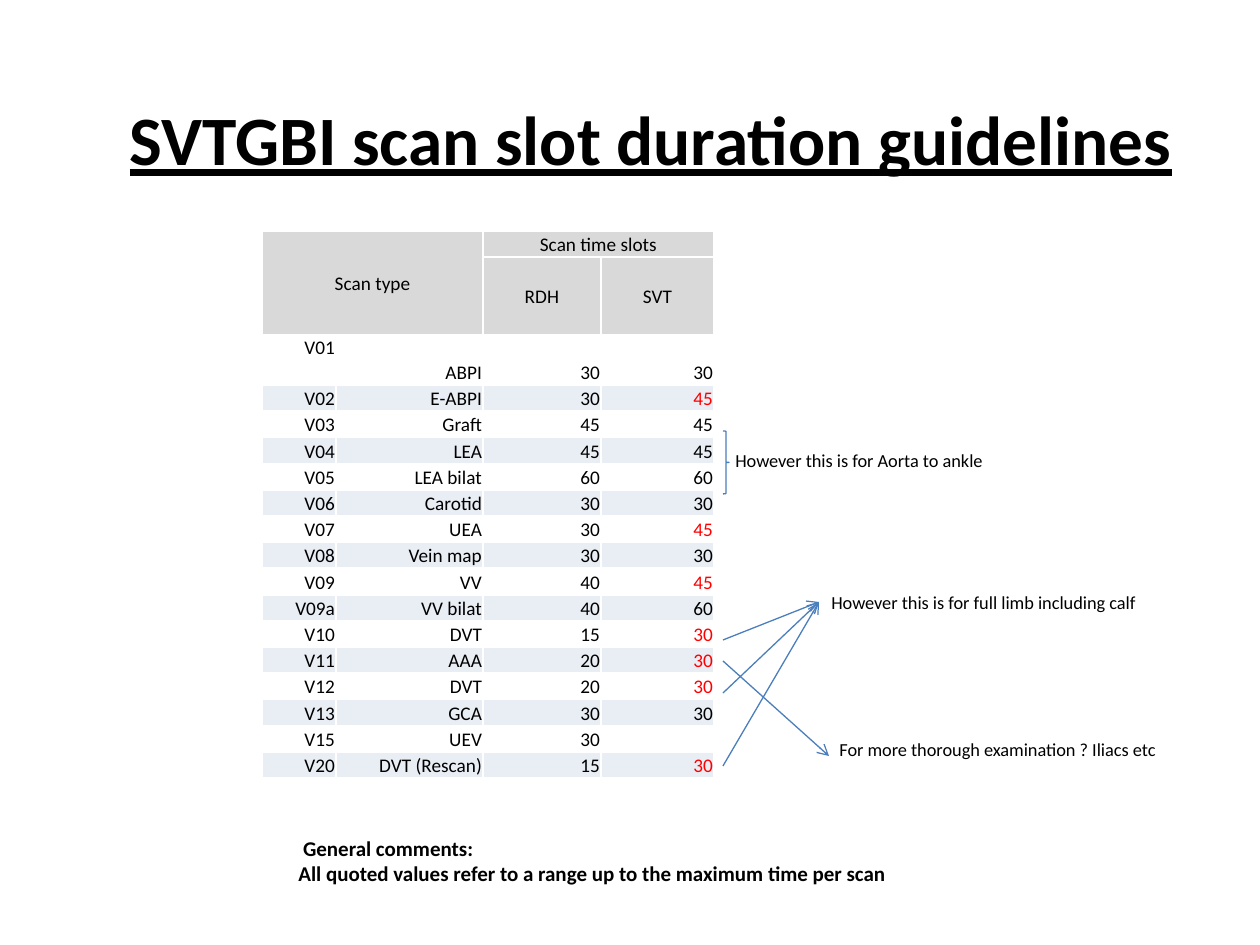
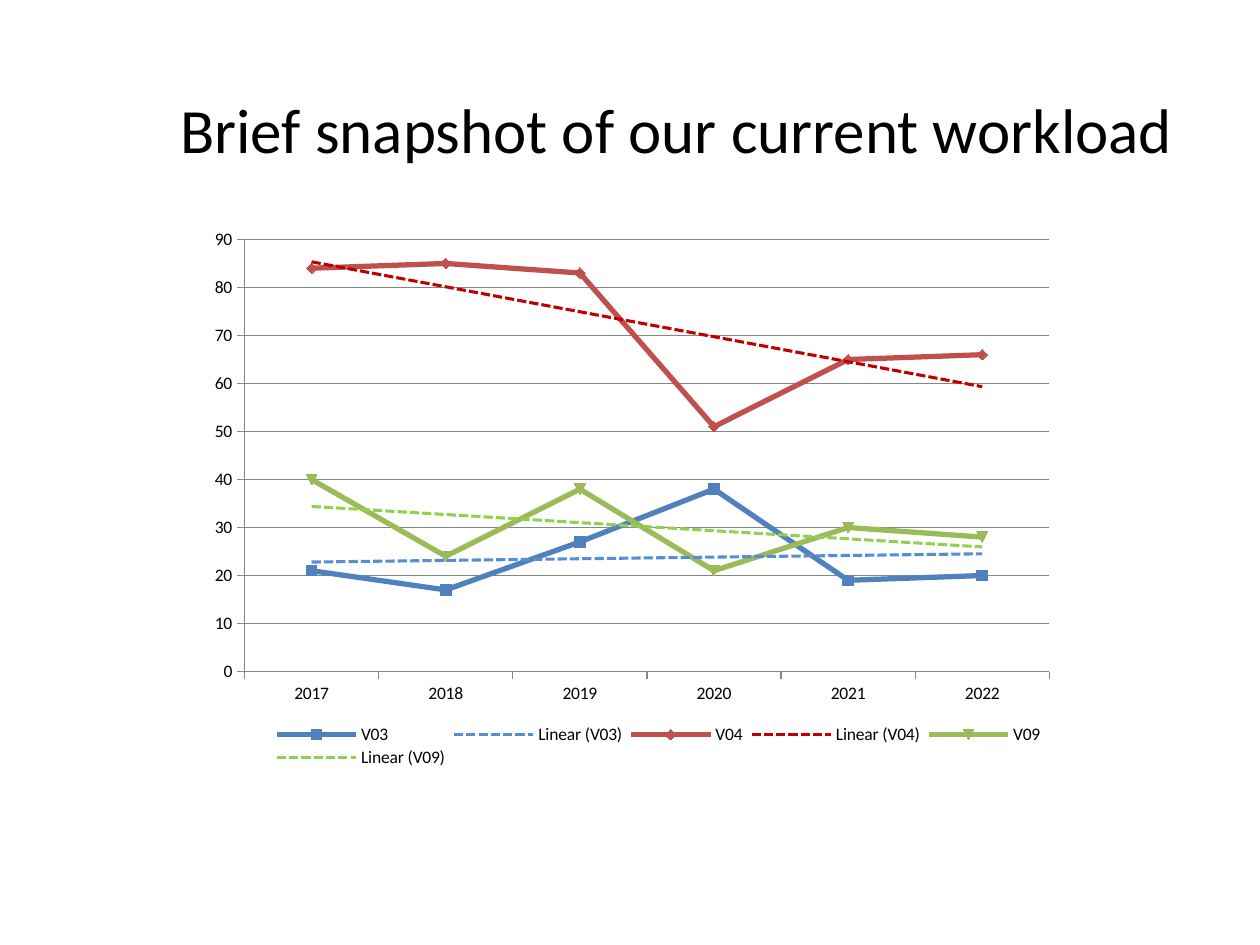
"""Build two slides: scan slot duration guidelines and a workload snapshot."""
from dataclasses import dataclass
from typing import Any, NamedTuple

import lxml.etree
import pptx
import pptx.chart.data
import pptx.dml.color
import pptx.enum.chart
import pptx.enum.dml
import pptx.enum.shapes
import pptx.enum.text
import pptx.oxml
import pptx.oxml.ns
import pptx.util

EMU_PER_PX = 914400 / 126
ALIGN = pptx.enum.text.PP_ALIGN
ANCHOR = pptx.enum.text.MSO_ANCHOR
qn = pptx.oxml.ns.qn


@dataclass(frozen=True)
class Theme:
    font: str = "Calibri"
    ink: str = "000000"
    paper: str = "FFFFFF"
    header: str = "D9D9D9"
    band: str = "E9EDF4"
    alert: str = "FF0000"
    pointer: str = "4B7EBC"
    axis: str = "868686"
    guideline_title: float = 39.6
    workload_title: float = 36
    comment: float = 12
    cell: float = 11
    note: float = 10.5
    chart: float = 10


class Box(NamedTuple):
    left: int
    top: int
    width: int
    height: int


class Scan(NamedTuple):
    code: str
    name: str
    rdh: str
    svt: str
    longer: bool = False


class Note(NamedTuple):
    text: str
    box: Box


class Pointer(NamedTuple):
    start: tuple[int, int]
    end: tuple[int, int]


class Workload(NamedTuple):
    code: str
    values: tuple[int, ...]
    color: str
    trend_color: str


THEME = Theme()

SCANS = [
    Scan("V01", "ABPI", "30", "30"),
    Scan("V02", "E-ABPI", "30", "45", True),
    Scan("V03", "Graft", "45", "45"),
    Scan("V04", "LEA", "45", "45"),
    Scan("V05", "LEA bilat", "60", "60"),
    Scan("V06", "Carotid", "30", "30"),
    Scan("V07", "UEA", "30", "45", True),
    Scan("V08", "Vein map", "30", "30"),
    Scan("V09", "VV", "40", "45", True),
    Scan("V09a", "VV bilat", "40", "60"),
    Scan("V10", "DVT", "15", "30", True),
    Scan("V11", "AAA", "20", "30", True),
    Scan("V12", "DVT", "20", "30", True),
    Scan("V13", "GCA", "30", "30"),
    Scan("V15", "UEV", "30", ""),
    Scan("V20", "DVT (Rescan)", "15", "30", True),
]
COLUMN_WIDTHS = [74, 147, 118, 113]
HEADER_HEIGHTS = [26, 78]
FIRST_SCAN_HEIGHT = 50
OTHER_SCANS_HEIGHT = 393

POINTER_X = 723
FULL_LIMB = (819, 602)
NOTES = [
    Note("However this is for full limb including calf", Box(819, 585, 335, 35)),
    Note("However this is for Aorta to ankle", Box(POINTER_X, 443, 277, 35)),
    Note("For more thorough examination ? Iliacs etc", Box(827, 732, 348, 35)),
]
POINTERS = [Pointer((POINTER_X, y), FULL_LIMB) for y in (693, 640, 766)]
POINTERS.append(Pointer((POINTER_X, 661), (829, 756)))
COMMENTS = [
    " General comments:",
    "All quoted values refer to a range up to the maximum time per scan",
]

YEARS = ["2017", "2018", "2019", "2020", "2021", "2022"]
WORKLOADS = [
    Workload("V03", (21, 17, 27, 38, 19, 20), "4F81BD", "558ED5"),
    Workload("V04", (84, 85, 83, 51, 65, 66), "C0504D", "C00000"),
    Workload("V09", (40, 24, 38, 21, 30, 28), "9BBB59", "92D050"),
]


def px(length: float) -> int:
    """Convert pixels to EMU."""
    return round(length * EMU_PER_PX)


def place(box: Box) -> list[int]:
    """Convert a box to EMU arguments."""
    return [px(length) for length in box]


def rgb(color: str) -> Any:
    """Return a colour from its hex form."""
    return pptx.dml.color.RGBColor.from_string(color)


def write(paragraph: Any, text: str, size: float, color: str = THEME.ink,
          bold: bool = False, underline: bool = False) -> None:
    """Add one styled run."""
    run = paragraph.add_run()
    run.text = text
    font = run.font
    font.name, font.size = THEME.font, pptx.util.Pt(size)
    font.bold, font.underline = bold, underline
    font.color.rgb = rgb(color)


def add_text(slide: Any, lines: list[str], box: Box, size: float, wrap: bool = False,
             bold: bool = False, underline: bool = False,
             align: Any = ALIGN.LEFT, anchor: Any = ANCHOR.TOP) -> None:
    """Add a text box with one paragraph per line."""
    frame = slide.shapes.add_textbox(*place(box)).text_frame
    frame.word_wrap, frame.vertical_anchor = wrap, anchor
    for index, line in enumerate(lines):
        paragraph = frame.add_paragraph() if index else frame.paragraphs[0]
        paragraph.alignment = align
        write(paragraph, line, size, bold=bold, underline=underline)


def style_line(line: Any, color: str, width: float) -> None:
    """Set the colour and width of a line."""
    line.color.rgb = rgb(color)
    line.width = pptx.util.Pt(width)


def add_pointer(slide: Any, pointer: Pointer) -> None:
    """Draw an arrow from a table row to its note."""
    ends = [px(value) for value in (*pointer.start, *pointer.end)]
    arrow = slide.shapes.add_connector(pptx.enum.shapes.MSO_CONNECTOR.STRAIGHT, *ends)
    style_line(arrow.line, THEME.pointer, 0.75)
    properties = arrow._element.spPr
    lxml.etree.SubElement(properties.find(qn("a:ln")), qn("a:tailEnd"), type="arrow")
    lxml.etree.SubElement(properties, qn("a:effectLst"))


def fill_cell(cell: Any, text: str, fill: str, align: Any, anchor: Any,
              color: str = THEME.ink) -> None:
    """Style and fill one table cell with white borders."""
    cell.margin_left = cell.margin_right = cell.margin_top = px(1)
    cell.margin_bottom = 0
    cell.vertical_anchor = anchor
    cell.fill.solid()
    cell.fill.fore_color.rgb = rgb(fill)
    for index, side in enumerate(("lnL", "lnR", "lnT", "lnB")):
        cell._tc.tcPr.insert(index, pptx.oxml.parse_xml(
            f'<a:{side} {pptx.oxml.ns.nsdecls("a")} w="12700"><a:solidFill>'
            f'<a:srgbClr val="{THEME.paper}"/></a:solidFill></a:{side}>'))
    paragraph = cell.text_frame.paragraphs[0]
    paragraph.alignment = align
    if text:
        write(paragraph, text, THEME.cell, color)
    else:
        lxml.etree.SubElement(paragraph._p, qn("a:endParaRPr"),
                              sz=str(int(THEME.cell * 100)))


def add_scan_table(slide: Any) -> None:
    """Add the table of scan time slots."""
    count = len(SCANS) - 1
    edges = [round(OTHER_SCANS_HEIGHT * i / count) for i in range(count + 1)]
    heights = [*HEADER_HEIGHTS, FIRST_SCAN_HEIGHT,
               *(below - above for above, below in zip(edges, edges[1:]))]
    box = Box(262, 231, sum(COLUMN_WIDTHS), sum(heights))
    table = slide.shapes.add_table(len(heights), len(COLUMN_WIDTHS), *place(box)).table
    table.first_row = table.horz_banding = False
    for column, width in zip(table.columns, COLUMN_WIDTHS):
        column.width = px(width)
    for row, height in zip(table.rows, heights):
        row.height = px(height)

    headings = [["Scan type", "", "Scan time slots", ""], ["", "", "RDH", "SVT"]]
    for row, labels in enumerate(headings):
        for column, label in enumerate(labels):
            fill_cell(table.cell(row, column), label, THEME.header,
                      ALIGN.CENTER, ANCHOR.MIDDLE)
    table.cell(0, 0).merge(table.cell(1, 1))
    table.cell(0, 2).merge(table.cell(0, 3))

    for index, scan in enumerate(SCANS):
        fill = THEME.band if index % 2 else THEME.paper
        svt_color = THEME.alert if scan.longer else THEME.ink
        for column, text in enumerate(scan[:4]):
            anchor = ANCHOR.TOP if index == column == 0 else ANCHOR.BOTTOM
            fill_cell(table.cell(index + len(HEADER_HEIGHTS), column), text, fill,
                      ALIGN.RIGHT, anchor, svt_color if column == 3 else THEME.ink)


def manual_layout(x: float, y: float, w: float, h: float, inner: bool = False) -> Any:
    """Return a chart layout given in fractions of the chart."""
    target = '<c:layoutTarget val="inner"/>' if inner else ""
    return pptx.oxml.parse_xml(
        f'<c:layout {pptx.oxml.ns.nsdecls("c")}><c:manualLayout>{target}'
        '<c:xMode val="edge"/><c:yMode val="edge"/>'
        f'<c:x val="{x}"/><c:y val="{y}"/><c:w val="{w}"/><c:h val="{h}"/>'
        '</c:manualLayout></c:layout>')


def drop_layout(part: Any) -> None:
    """Remove the automatic layout of a chart part."""
    for layout in part.findall(qn("c:layout")):
        part.remove(layout)


def add_trend(series: Any, color: str) -> None:
    """Add a dashed linear trend line to a series."""
    series._element.find(qn("c:cat")).addprevious(pptx.oxml.parse_xml(
        f'<c:trendline {pptx.oxml.ns.nsdecls("c", "a")}><c:spPr><a:ln w="22225">'
        f'<a:solidFill><a:srgbClr val="{color}"/></a:solidFill>'
        '<a:prstDash val="sysDash"/></a:ln></c:spPr>'
        '<c:trendlineType val="linear"/><c:dispRSqr val="0"/><c:dispEq val="0"/>'
        '</c:trendline>'))


def add_workload_chart(slide: Any) -> None:
    """Add the line chart of yearly workload with trends."""
    data = pptx.chart.data.CategoryChartData()
    data.categories = YEARS
    for workload in WORKLOADS:
        data.add_series(workload.code, workload.values)
    chart = slide.shapes.add_chart(pptx.enum.chart.XL_CHART_TYPE.LINE_MARKERS,
                                   *place(Box(199, 220, 859, 557)), data).chart
    chart.has_title = False
    chart.font.name, chart.font.size = THEME.font, pptx.util.Pt(THEME.chart)
    chart.font.color.rgb = rgb(THEME.ink)
    plot = chart.plots[0]
    plot.vary_by_categories = False
    for series, workload in zip(plot.series, WORKLOADS):
        series.smooth = False
        style_line(series.format.line, workload.color, 3)
        series.marker.size = 6
        series.marker.format.fill.solid()
        series.marker.format.fill.fore_color.rgb = rgb(workload.color)
        style_line(series.marker.format.line, workload.color, 0.75)
        add_trend(series, workload.trend_color)

    counts = chart.value_axis
    counts.minimum_scale, counts.maximum_scale, counts.major_unit = 0, 90, 10
    counts.has_major_gridlines = True
    style_line(counts.major_gridlines.format.line, THEME.axis, 0.75)
    for axis in (counts, chart.category_axis):
        axis.major_tick_mark = pptx.enum.chart.XL_TICK_MARK.OUTSIDE
        style_line(axis.format.line, THEME.axis, 0.75)

    chart.has_legend = True
    chart.legend.position = pptx.enum.chart.XL_LEGEND_POSITION.BOTTOM
    chart.legend.include_in_layout = False
    legend = chart.legend._element
    drop_layout(legend)
    legend.find(qn("c:legendPos")).addnext(manual_layout(0.08, 0.9, 0.91, 0.09))
    plot_area = chart._chartSpace.chart.plotArea
    drop_layout(plot_area)
    plot_area.insert(0, manual_layout(0.053, 0.035, 0.937, 0.776, inner=True))


def build_guidelines(slide: Any) -> None:
    """Build the slide of scan slot durations."""
    add_scan_table(slide)
    for note in NOTES:
        add_text(slide, [note.text], note.box, THEME.note)
    brace = slide.shapes.add_shape(pptx.enum.shapes.MSO_SHAPE.RIGHT_BRACE,
                                   *place(Box(POINTER_X, 431, 6, 63)))
    brace.shadow.inherit = False
    brace.fill.background()
    style_line(brace.line, THEME.pointer, 0.75)
    for pointer in POINTERS:
        add_pointer(slide, pointer)
    add_text(slide, COMMENTS, Box(286, 829, 630, 63), THEME.comment, wrap=True, bold=True)
    add_text(slide, ["SVTGBI scan slot duration guidelines"], Box(84, 59, 1134, 158),
             THEME.guideline_title, wrap=True, bold=True, underline=True,
             align=ALIGN.CENTER, anchor=ANCHOR.MIDDLE)


def build_workload(slide: Any) -> None:
    """Build the slide of current workload."""
    add_workload_chart(slide)
    add_text(slide, ["Brief snapshot of our current workload"], Box(168, 84, 1031, 89),
             THEME.workload_title)


def main() -> None:
    """Build and save the presentation."""
    deck = pptx.Presentation()
    deck.slide_width, deck.slide_height = px(1260), px(945)
    for build in (build_guidelines, build_workload):
        build(deck.slides.add_slide(deck.slide_layouts[6]))
    deck.save("out.pptx")


if __name__ == "__main__":
    main()
